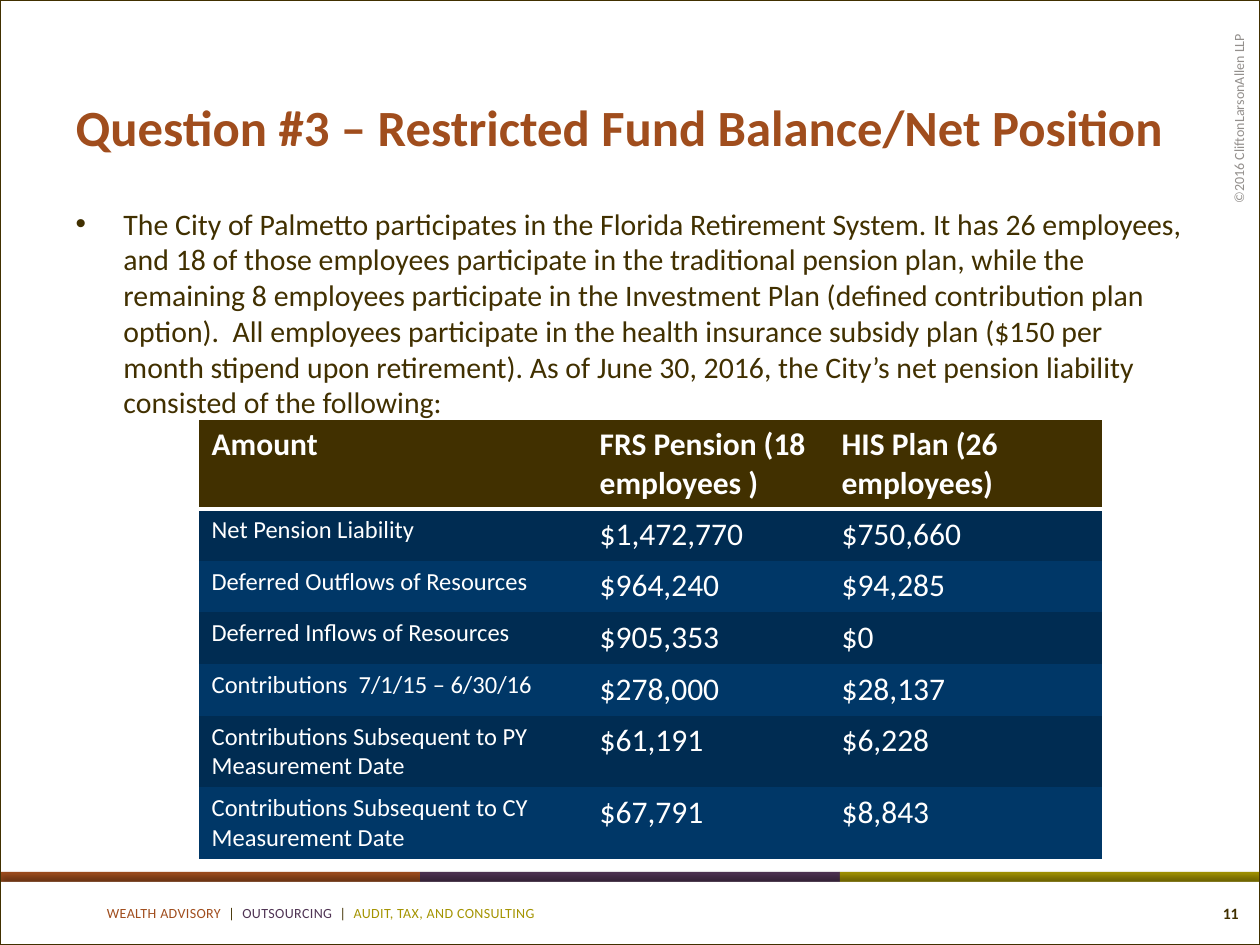
from pptx import Presentation
from pptx.dml.color import RGBColor
from pptx.enum.shapes import MSO_SHAPE
from pptx.enum.text import MSO_ANCHOR, MSO_AUTO_SIZE, PP_ALIGN
from pptx.oxml import parse_xml
from pptx.oxml.ns import nsdecls, qn
from pptx.util import Inches, Pt

FONT = "Calibri"
RUST, PLUM, OLIVE, BROWN = "A04D1D", "4F3353", "A49400", "413000"
WHITE, GREY = "FFFFFF", "938F8C"
ROW_FILLS = ("002C52", "003767")
NO_STYLE = "{2D5ABB26-0587-4C30-8999-92F81FD0307C}"

QUESTION = (
    "The City of Palmetto participates in the Florida Retirement System. "
    "It has 26 employees, and 18 of those employees participate in the "
    "traditional pension plan, while the remaining 8 employees participate in "
    "the Investment Plan (defined contribution plan option).  All employees "
    "participate in the health insurance subsidy plan ($150 per month stipend "
    "upon retirement). As of June 30, 2016, the City’s net pension liability "
    "consisted of the following:"
)
HEADINGS = ("Amount", "FRS Pension (18 employees )", "HIS Plan (26 employees)")
AMOUNTS = (
    ("Net Pension Liability", "$1,472,770", "$750,660"),
    ("Deferred Outflows of Resources", "$964,240", "$94,285"),
    ("Deferred Inflows of Resources", "$905,353", "$0"),
    ("Contributions  7/1/15 – 6/30/16", "$278,000", "$28,137"),
    ("Contributions Subsequent to PY Measurement Date", "$61,191", "$6,228"),
    ("Contributions Subsequent to CY Measurement Date", "$67,791", "$8,843"),
)
COLUMN_WIDTHS = (3.08, 1.92, 2.17)
ROW_HEIGHTS = (0.71, 0.41, 0.41, 0.41, 0.41, 0.57, 0.57)
SERVICES = (
    ("WEALTH ADVISORY  ", RUST), ("|  ", BROWN), ("OUTSOURCING  ", PLUM),
    ("|  ", BROWN), ("AUDIT, TAX, AND CONSULTING", OLIVE),
)


def rgb(color):
    return RGBColor.from_string(color)


def add_run(paragraph, text, size, color, bold=False):
    run = paragraph.add_run()
    run.text = text
    font = run.font
    font.name, font.size, font.bold = FONT, Pt(size), bold
    font.color.rgb = rgb(color)
    return run


def add_rectangle(slide, box, fill=None, line=None):
    rectangle = slide.shapes.add_shape(MSO_SHAPE.RECTANGLE, *map(Inches, box))
    rectangle.shadow.inherit = False
    if fill:
        rectangle.fill.solid()
        rectangle.fill.fore_color.rgb = rgb(fill)
    else:
        rectangle.fill.background()
    if line:
        rectangle.line.color.rgb = rgb(line)
        rectangle.line.width = Pt(0.75)
    else:
        rectangle.line.fill.background()
    return rectangle


def add_label(slide, box, anchor=MSO_ANCHOR.TOP, align=PP_ALIGN.LEFT):
    label = slide.shapes.add_textbox(*map(Inches, box))
    label.text_frame.word_wrap = True
    label.text_frame.vertical_anchor = anchor
    label.text_frame.paragraphs[0].alignment = align
    return label


def place(placeholder, box):
    placeholder.left, placeholder.top, placeholder.width, placeholder.height = map(Inches, box)
    placeholder.text_frame.auto_size = MSO_AUTO_SIZE.NONE
    return placeholder.text_frame


def add_frame(slide, box):
    left, top, width, height = box
    # Coloured band in three equal parts
    part = width / 3
    for index, color in enumerate((RUST, PLUM, OLIVE)):
        add_rectangle(slide, (left + index * part, top + 6.92, part, 0.08), color)

    # Footer panel, casting a soft shadow upwards on the band
    footer = add_rectangle(slide, (left, top + 7, width, 0.5), WHITE)
    effects = footer._element.spPr.find(qn("a:effectLst"))
    effects.append(parse_xml(
        f'<a:outerShdw {nsdecls("a")} blurRad="{Pt(4)}" dist="{Pt(3)}" dir="16200000"'
        ' rotWithShape="0"><a:srgbClr val="000000"><a:alpha val="34000"/></a:srgbClr>'
        "</a:outerShdw>"))

    # Slide border
    add_rectangle(slide, box, line=BROWN)


def add_copyright(slide, box):
    notice = add_label(slide, box, MSO_ANCHOR.MIDDLE, PP_ALIGN.RIGHT)
    notice.rotation = 270
    add_run(notice.text_frame.paragraphs[0], "©2016 CliftonLarsonAllen LLP", 8, GREY)


def add_services(slide, box):
    services = add_label(slide, box)
    for text, color in SERVICES:
        run = add_run(services.text_frame.paragraphs[0], text, 8, color)
        run.font._element.set("spc", "20")


def add_slide_number(slide, box):
    number = add_label(slide, box, MSO_ANCHOR.MIDDLE, PP_ALIGN.RIGHT)
    add_run(number.text_frame.paragraphs[0], "11", 9, BROWN, bold=True)


def fill_title(slide, box):
    frame = place(slide.shapes.title, box)
    frame.vertical_anchor = MSO_ANCHOR.MIDDLE
    heading = frame.paragraphs[0]
    heading.alignment = PP_ALIGN.LEFT
    add_run(heading, "Question #3 – Restricted Fund Balance/Net Position", 29, RUST, bold=True)


def fill_question(slide, box):
    question = place(slide.placeholders[1], box).paragraphs[0]
    properties = question._p.get_or_add_pPr()
    properties.set("marL", str(Inches(0.38)))
    properties.set("indent", str(Inches(-0.38)))
    properties.append(parse_xml(f'<a:buChar {nsdecls("a")} char="•"/>'))
    question.space_before = Pt(0)
    add_run(question, QUESTION, 17, BROWN)


def fill_cell(cell, text, size, fill, bold=False):
    cell.fill.solid()
    cell.fill.fore_color.rgb = rgb(fill)
    add_run(cell.text_frame.paragraphs[0], text, size, WHITE, bold)


def add_amounts(slide, box):
    rows = len(AMOUNTS) + 1
    frame = slide.shapes.add_table(rows, len(HEADINGS), *map(Inches, box))
    amounts = frame.table
    amounts._tbl.tblPr.find(qn("a:tableStyleId")).text = NO_STYLE
    for column, width in zip(amounts.columns, COLUMN_WIDTHS):
        column.width = Inches(width)
    for row, height in zip(amounts.rows, ROW_HEIGHTS):
        row.height = Inches(height)

    # Header row with a white rule below
    for column, heading in enumerate(HEADINGS):
        cell = amounts.cell(0, column)
        fill_cell(cell, heading, 18, BROWN, bold=True)
        cell._tc.get_or_add_tcPr().insert(0, parse_xml(
            f'<a:lnB {nsdecls("a")} w="{Pt(2)}"><a:solidFill>'
            f'<a:srgbClr val="{WHITE}"/></a:solidFill></a:lnB>'))

    # Banded rows: small labels, larger values
    for row, values in enumerate(AMOUNTS, start=1):
        for column, value in enumerate(values):
            size = 18 if column else 14
            fill_cell(amounts.cell(row, column), value, size, ROW_FILLS[(row - 1) % 2])


def main():
    deck = Presentation()
    deck.slide_width, deck.slide_height = Inches(10), Inches(7.5)
    slide = deck.slides.add_slide(deck.slide_layouts[1])
    add_frame(slide, (0, 0, 10, 7.5))
    add_copyright(slide, (8.54, 1.29, 2.58, 0.34))
    add_services(slide, (0.75, 7.13, 4.08, 0.24))
    fill_title(slide, (0.5, 0.5, 9, 1))
    fill_question(slide, (0.5, 1.58, 9, 5))
    add_slide_number(slide, (9.5, 7, 0.43, 0.5))
    add_amounts(slide, (1.58, 3.33, 7.17, 3.49))
    deck.save("out.pptx")


if __name__ == "__main__":
    main()
